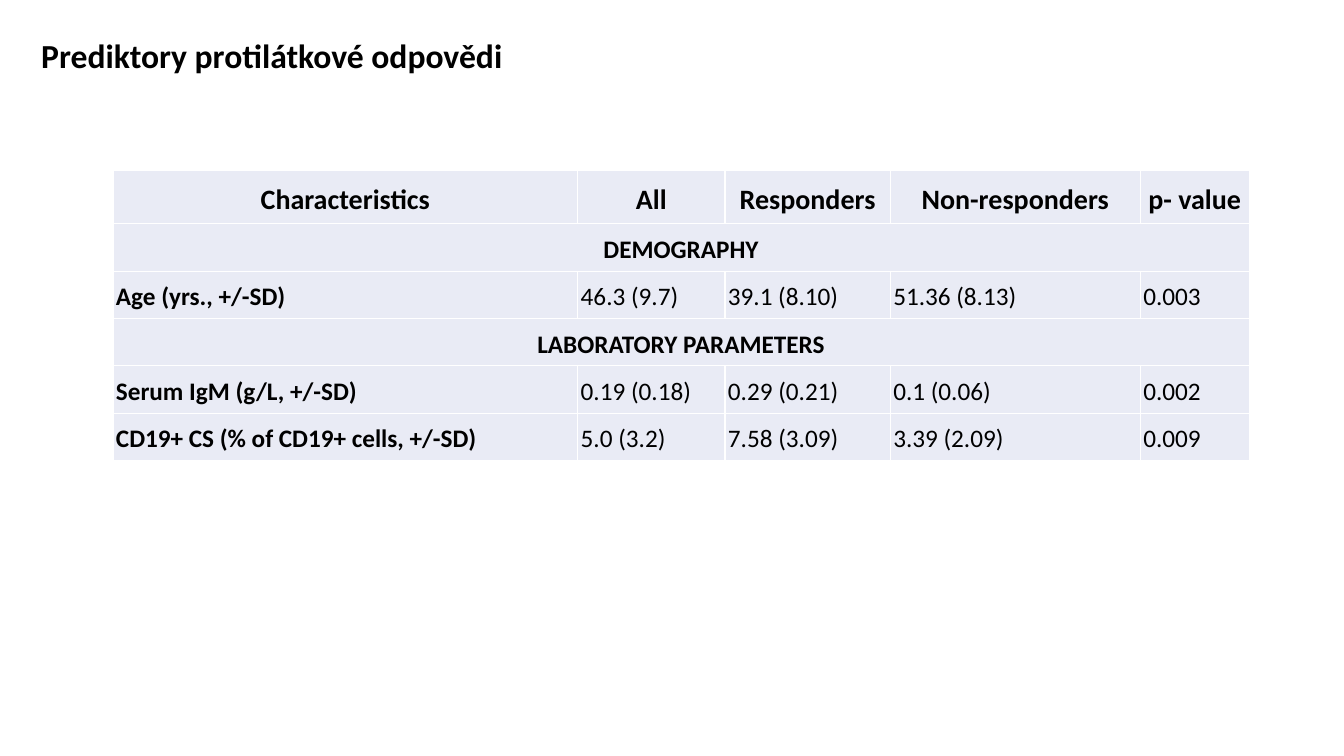
from lxml.etree import SubElement as Sub
from pptx import Presentation
from pptx.dml.color import RGBColor as RGB
from pptx.enum.text import MSO_ANCHOR as Anchor, MSO_AUTO_SIZE as Auto, PP_ALIGN as Align
from pptx.oxml.ns import qn
from pptx.util import Inches, Pt

COLORS = {"text": "000000", "cell": "E9EBF5", "rule": "FFFFFF"}

TITLE = "Prediktory protilátkové odpovědi"
WIDTHS = [4.61, 1.46, 1.64, 2.48, 1.08]
# A row with a single entry is a section heading across the table
ROWS = [
    ["Characteristics", "All", "Responders", "Non-responders", "p- value"],
    ["DEMOGRAPHY"],
    ["Age (yrs., +/-SD)", "46.3 (9.7)", "39.1 (8.10)", "51.36 (8.13)", "0.003"],
    ["LABORATORY PARAMETERS"],
    ["Serum IgM (g/L, +/-SD)", "0.19 (0.18)", "0.29 (0.21)", "0.1 (0.06)", "0.002"],
    ["CD19+ CS (% of CD19+ cells, +/-SD)", "5.0 (3.2)", "7.58 (3.09)", "3.39 (2.09)", "0.009"],
]


class Deck:
    face = "Calibri"

    def __init__(self, wide, high):
        self.prs = Presentation()
        self.prs.slide_width, self.prs.slide_height = Inches(wide), Inches(high)
        self.slide = self.prs.slides.add_slide(self.prs.slide_layouts[6])

    def label(self, frame, text, size, bold):
        para = frame.paragraphs[0]
        para.text = text
        font = para.font
        font.name, font.size, font.bold = self.face, Pt(size), bold
        font.color.rgb = RGB.from_string(COLORS["text"])
        return para

    def title(self, text, box):
        frame = self.slide.shapes.add_textbox(*map(Inches, box)).text_frame
        frame.word_wrap = True
        frame.auto_size = Auto.SHAPE_TO_FIT_TEXT
        self.label(frame, text, 24, True)

    def style(self, cell):
        cell.margin_left = cell.margin_right = Inches(0.03)
        cell.margin_top = cell.margin_bottom = 0
        cell.vertical_anchor = Anchor.MIDDLE
        # Borders go ahead of the fill in the cell properties
        props = cell._tc.get_or_add_tcPr()
        for side in "LRTB":
            line = Sub(props, qn(f"a:ln{side}"), w=str(Pt(1)))
            Sub(Sub(line, qn("a:solidFill")), qn("a:srgbClr"), val=COLORS["rule"])
        cell.fill.solid()
        cell.fill.fore_color.rgb = RGB.from_string(COLORS["cell"])

    def table(self, rows, widths, box):
        grid = self.slide.shapes.add_table(len(rows), len(widths), *map(Inches, box)).table
        for col, width in zip(grid.columns, widths):
            col.width = Inches(width)
        for r, texts in enumerate(rows):
            head, band = r == 0, len(texts) == 1
            grid.rows[r].height = Inches(0.53 if head else 0.47)
            for c in range(len(widths)):
                self.style(grid.cell(r, c))
            if band:
                grid.cell(r, 0).merge(grid.cell(r, len(widths) - 1))
            for c, text in enumerate(texts):
                frame = grid.cell(r, c).text_frame
                para = self.label(frame, text, 20 if head else 18, head or c == 0)
                para.line_spacing = 1.15
                para.alignment = Align.CENTER if head or band else Align.LEFT


def main():
    deck = Deck(13.33, 7.5)
    # Heading
    deck.title(TITLE, (0.31, 0.3, 6.18, 0.5))
    # Predictor table
    deck.table(ROWS, WIDTHS, (1.12, 1.69, 11.26, 2.9))
    deck.prs.save("out.pptx")


if __name__ == "__main__":
    main()
